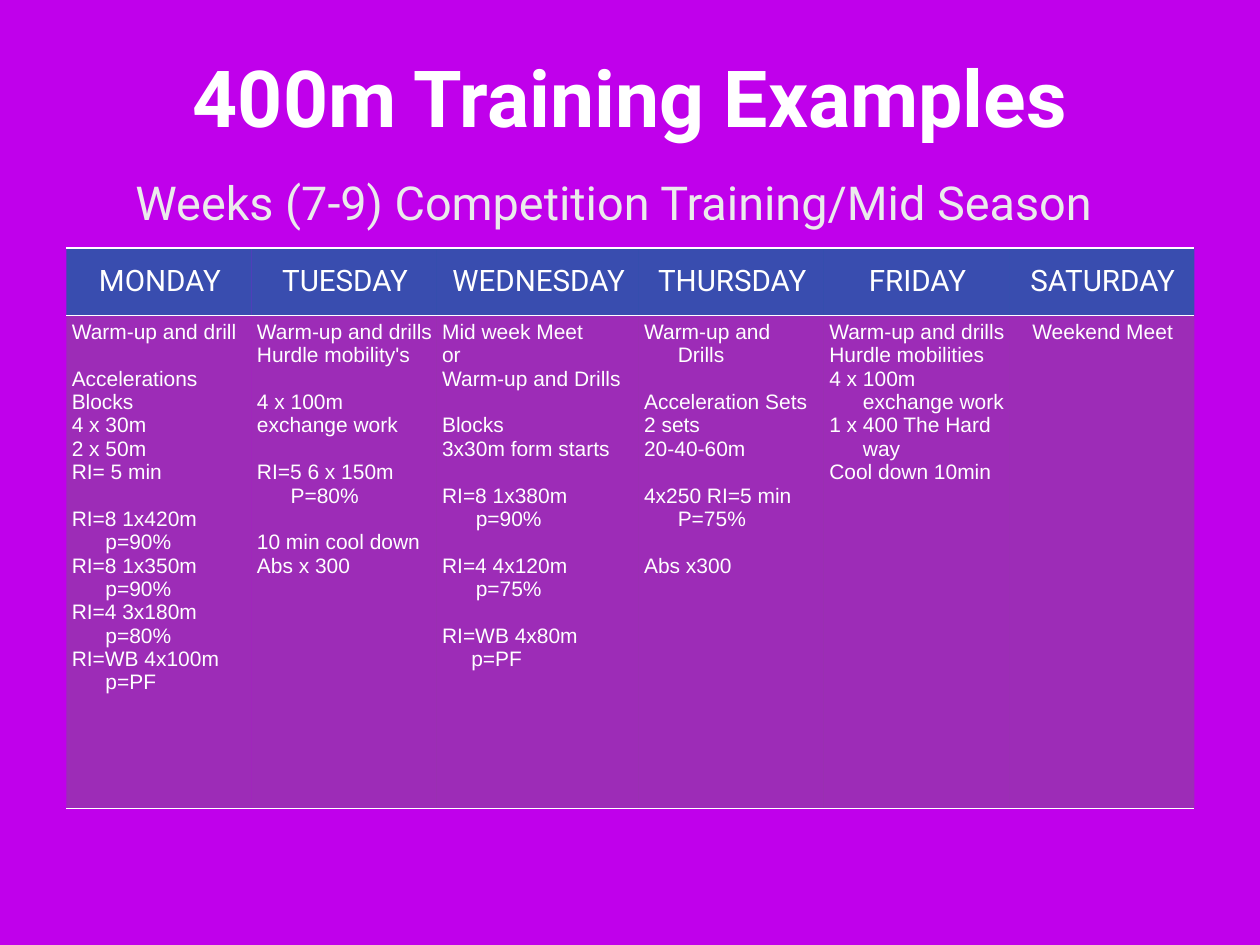
from lxml import etree
from pptx import Presentation
from pptx.dml.color import RGBColor
from pptx.enum import text
from pptx.oxml import ns
from pptx.util import Inches, Pt

PURPLE = RGBColor(0xC0, 0x00, 0xEB)
WHITE = RGBColor(0xFF, 0xFF, 0xFF)
PALE = RGBColor(0xEB, 0xEB, 0xEB)
BLUE = RGBColor(0x18, 0x61, 0xA1)
GRAY = RGBColor(0x6D, 0x6D, 0x6D)

CENTER = text.PP_ALIGN.CENTER
MIDDLE = text.MSO_ANCHOR.MIDDLE
LINE = Pt(19)
HANG = Inches(0.38)
DAY_WIDTH, WIDE_DAY_WIDTH = 2.09, 2.28

# An empty entry leaves a one-line gap before the next paragraph.
WEEK = {
    "MONDAY": ["Warm-up and drill", "", "Accelerations", "Blocks", "4 x 30m",
               "2 x 50m", "RI= 5 min", "", "RI=8 1x420m p=90%",
               "RI=8 1x350m p=90%", "RI=4 3x180m p=80%", "RI=WB 4x100m p=PF"],
    "TUESDAY": ["Warm-up and drills", "Hurdle mobility's", "", "4 x 100m",
                "exchange work", "", "RI=5 6 x 150m P=80%", "",
                "10 min cool down", "Abs x 300"],
    "WEDNESDAY": ["Mid week Meet", "or", "Warm-up and Drills", "", "Blocks",
                  "3x30m form starts", "", "RI=8 1x380m p=90%", "",
                  "RI=4 4x120m p=75%", "", "RI=WB 4x80m", "p=PF"],
    "THURSDAY": ["Warm-up and Drills", "", "Acceleration Sets", "2 sets",
                 "20-40-60m", "", "4x250 RI=5 min P=75%", "", "Abs x300"],
    "FRIDAY": ["Warm-up and drills", "Hurdle mobilities",
               "4 x 100m exchange work", "1 x 400 The Hard way",
               "Cool down 10min"],
    "SATURDAY": ["Weekend Meet"],
}


def write(p, words, size, font, color=WHITE, bold=False):
    p.text = words
    for r in p.runs:
        r.font.size = Pt(size)
        r.font.name = font
        r.font.bold = bold
        r.font.color.rgb = color


def add_heading(s, box, words, size, color, bold=False, wrap=True):
    tf = s.shapes.add_textbox(*map(Inches, box)).text_frame
    tf.word_wrap = wrap
    tf.vertical_anchor = MIDDLE
    tf.margin_left = tf.margin_right = tf.margin_top = tf.margin_bottom = 0
    p = tf.paragraphs[0]
    p.alignment = CENTER
    write(p, words, size, "Roboto", color, bold)


def style_cell(cell, color, opacity):
    """Set margins, a translucent fill, and white rules above and below only."""
    cell.margin_left = cell.margin_top = cell.margin_bottom = Inches(0.06)
    cell.margin_right = Inches(0.04)
    cell.fill.solid()
    cell.fill.fore_color.rgb = color
    tcPr = cell._tc.get_or_add_tcPr()
    srgb = tcPr.find(".//" + ns.qn("a:srgbClr"))
    etree.SubElement(srgb, ns.qn("a:alpha"), val=str(opacity * 1000))
    for i, side in enumerate("LRTB"):
        ln = etree.Element(ns.qn("a:ln" + side), w=str(Pt(1)))
        if side in "LR":
            etree.SubElement(ln, ns.qn("a:noFill"))
        else:
            fill = etree.SubElement(ln, ns.qn("a:solidFill"))
            etree.SubElement(fill, ns.qn("a:srgbClr"), val=str(WHITE))
        tcPr.insert(i, ln)


def fill_workout(cell, lines):
    tf = cell.text_frame
    gap = False
    for i, line in enumerate(lines):
        if not line:
            gap = True
            continue
        p = tf.add_paragraph() if i else tf.paragraphs[0]
        pPr = p._p.get_or_add_pPr()
        if line.startswith("p="):
            pPr.set("marL", str(Inches(0.33)))
        else:
            pPr.set("marL", str(HANG))
            pPr.set("indent", str(-HANG))
        p.line_spacing = LINE
        if gap:
            p.space_before = LINE
        gap = False
        write(p, line, 17, "Arial")


def add_schedule(s):
    frame = s.shapes.add_table(2, len(WEEK), Inches(0.75), Inches(2.8),
                               Inches(12.73), Inches(6.33))
    table = frame.table
    table.first_row = table.horz_banding = False
    table.rows[0].height = Inches(0.76)
    table.rows[1].height = Inches(5.57)
    for col, (day, lines) in enumerate(WEEK.items()):
        width = WIDE_DAY_WIDTH if day == "WEDNESDAY" else DAY_WIDTH
        table.columns[col].width = Inches(width)
        header, workout = table.cell(0, col), table.cell(1, col)
        style_cell(header, BLUE, 80)
        header.vertical_anchor = MIDDLE
        p = header.text_frame.paragraphs[0]
        p.alignment = CENTER
        write(p, day, 24, "Roboto")
        style_cell(workout, GRAY, 41)
        fill_workout(workout, lines)
    table.cell(1, len(WEEK) - 1).text_frame.paragraphs[0].alignment = CENTER


def main():
    prs = Presentation()
    prs.slide_width, prs.slide_height = Inches(14.22), Inches(10.67)
    s = prs.slides.add_slide(prs.slide_layouts[6])
    s.background.fill.solid()
    s.background.fill.fore_color.rgb = PURPLE
    add_heading(s, (0.83, -0.09, 12.56, 2.35), "400m Training Examples",
                64, WHITE, bold=True)
    add_schedule(s)
    add_heading(s, (1.3, 1.91, 11.26, 0.73),
                "Weeks (7-9) Competition Training/Mid Season",
                38, PALE, wrap=False)
    prs.save("out.pptx")


if __name__ == "__main__":
    main()
